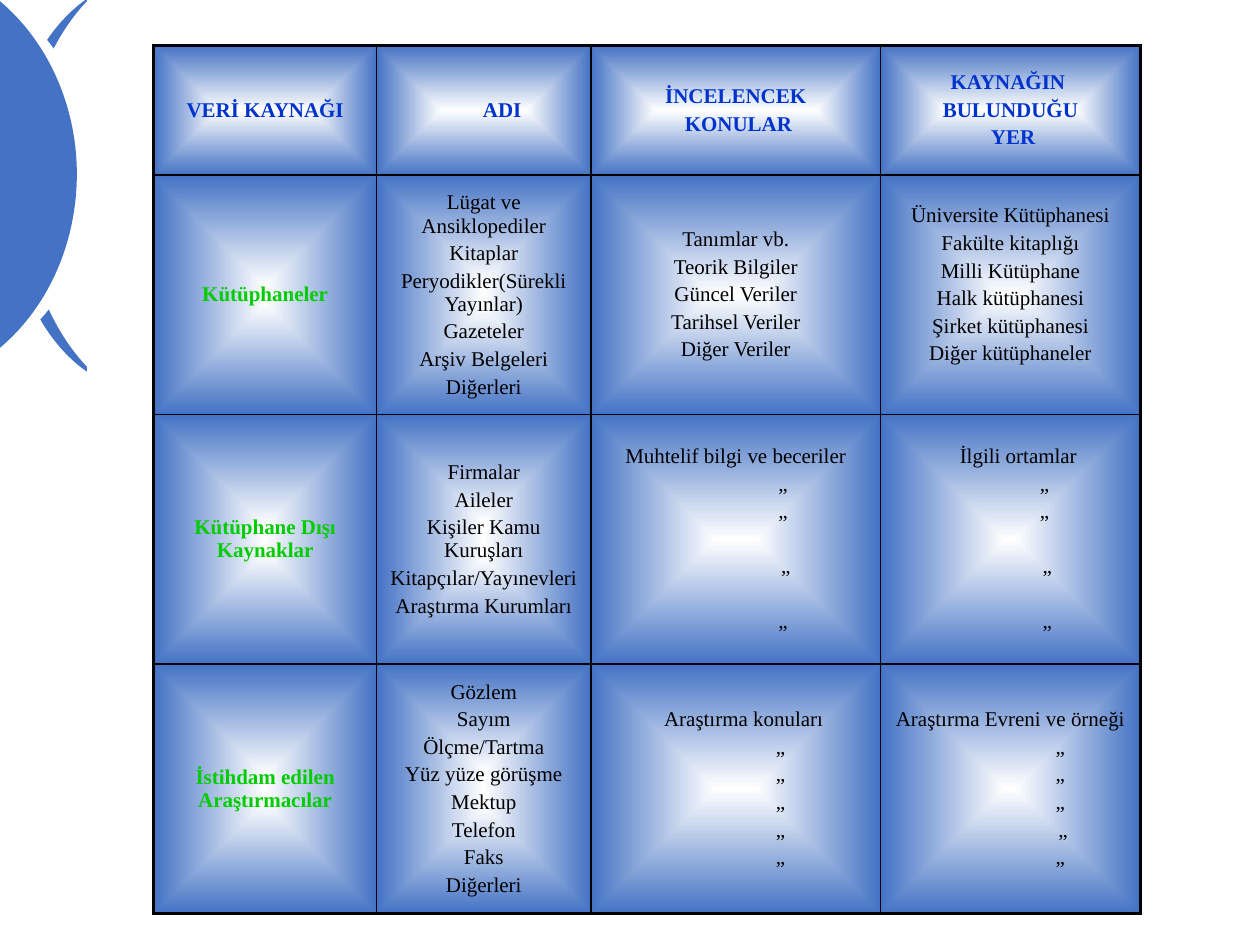
from lxml import etree
from pptx import Presentation
from pptx.dml.color import RGBColor
from pptx.enum import text
from pptx.oxml import ns
from pptx.util import Inches, Pt

FONT, SIZE = "Times New Roman", 12
BLUE, WHITE, BLACK = "4472C4", "FFFFFF", "000000"
HEAD, LABEL = "0033CC", "00CC00"
SPACE_PT, BEFORE_PT, SKIP_PT = 3, 2.4, 15.7
THIN, THICK = 1, 2.25

ARCS = [
    (BLUE, (0.05, -0.17, 2.23, 3.27), 180,
     [(0.69, 2.95), (0.3, 2.68), (0.05, 2.1), (0.05, 1.47),
      (0.05, 0.83), (0.3, 0.26), (0.69, -0.01)]),
    (WHITE, (0.18, -0.33, 2.51, 3.59), 180,
     [(0.7, 2.92), (0.37, 2.58), (0.18, 2.04), (0.18, 1.46),
      (0.18, 0.88), (0.37, 0.34), (0.7, 0)]),
    (WHITE, (-1.82, -0.15, 2.56, 3.09), 0,
     [(0, 0), (0.45, 0.25), (0.74, 0.8), (0.74, 1.39),
      (0.74, 1.99), (0.45, 2.54), (0, 2.79)]),
    (BLUE, (-2.28, -0.31, 2.88, 3.39), 0,
     [(0, 0.01), (0.38, 0.33), (0.61, 0.84), (0.61, 1.38),
      (0.61, 1.93), (0.38, 2.44), (0, 2.76)]),
]

LEFT, TOP = 1.22, 0.36
COLS = [1.77, 1.7, 2.3, 2.06]
ROWS = [1.03, 1.9, 1.98, 1.98]
BOTTOM_MARGINS = {(1, 3): 0.21}


def dittos(*indents, skips=()):
    return [("„", n, i in skips) for i, n in enumerate(indents)]


CELLS = [
    [["VERİ KAYNAĞI"], [("ADI", 7, False)],
     ["İNCELENCEK", ("KONULAR", 1, False)],
     ["KAYNAĞIN ", "BULUNDUĞU", ("YER", 1, False)]],
    [["Kütüphaneler"],
     ["Lügat ve Ansiklopediler", "Kitaplar", "Peryodikler(Sürekli Yayınlar)",
      "Gazeteler", "Arşiv Belgeleri", "Diğerleri"],
     ["Tanımlar vb.", "Teorik Bilgiler", "Güncel Veriler",
      "Tarihsel Veriler", "Diğer Veriler"],
     ["Üniversite Kütüphanesi", "Fakülte kitaplığı", "Milli Kütüphane",
      "Halk kütüphanesi", "Şirket kütüphanesi", "Diğer kütüphaneler"]],
    [["Kütüphane Dışı Kaynaklar"],
     ["Firmalar", "Aileler", "Kişiler Kamu Kuruşları",
      "Kitapçılar/Yayınevleri", "Araştırma Kurumları"],
     ["Muhtelif bilgi ve beceriler"] + dittos(18, 18, 19, 18, skips=(2, 3)),
     [("İlgili ortamlar", 3, False)] + dittos(13, 13, 14, 14, skips=(2, 3))],
    [["İstihdam edilen Araştırmacılar"],
     ["Gözlem", "Sayım", "Ölçme/Tartma", "Yüz yüze görüşme", "Mektup",
      "Telefon", "Faks", "Diğerleri"],
     [("Araştırma konuları", 3, False)] + dittos(17, 17, 17, 17, 17),
     ["Araştırma Evreni ve örneği"] + dittos(19, 19, 19, 20, 19)],
]


def rgb(value):
    return RGBColor.from_string(value)


def child(parent, tag, **attrs):
    return etree.SubElement(parent, ns.qn("a:" + tag), {k: str(v) for k, v in attrs.items()})


def add_arc(s, color, box, turn, points):
    left, top, width, height = box
    local = [(x - left, y - top) for x, y in points]
    if turn:
        local = [(width - x, height - y) for x, y in local]
    pts = [(Inches(x), Inches(y)) for x, y in local]
    builder = s.shapes.build_freeform(*pts[0])
    builder.add_line_segments(pts[3::3], close=True)
    sp = builder.convert_to_shape()
    sp.left, sp.top, sp.width, sp.height = map(Inches, box)
    sp.rotation = turn
    outline = sp._element.find(".//" + ns.qn("a:path"))
    outline.set("w", str(Inches(width)))
    outline.set("h", str(Inches(height)))
    for step in list(outline):
        outline.remove(step)
    for tag, group in (("moveTo", pts[:1]), ("cubicBezTo", pts[1:4]), ("cubicBezTo", pts[4:])):
        step = child(outline, tag)
        for x, y in group:
            child(step, "pt", x=int(x), y=int(y))
    child(outline, "close")
    sp.shadow.inherit = False
    sp.fill.solid()
    sp.fill.fore_color.rgb = rgb(color)
    sp.line.fill.background()


def style_cell(cell, widths):
    tc_pr = cell._tc.get_or_add_tcPr()
    for side, width in widths.items():
        line = child(tc_pr, "ln" + side, w=int(Pt(width)))
        child(child(line, "solidFill"), "srgbClr", val=BLACK)
    grad = child(tc_pr, "gradFill", rotWithShape=1)
    stops = child(grad, "gsLst")
    for pos, color in ((0, WHITE), (100000, BLUE)):
        child(child(stops, "gs", pos=pos), "srgbClr", val=color)
    child(child(grad, "path", path="shape"), "fillToRect", l=50000, t=50000, r=50000, b=50000)


def write_cell(cell, items, color, bold):
    cell.vertical_anchor = text.MSO_ANCHOR.MIDDLE
    tf = cell.text_frame
    for i, item in enumerate(items):
        words, indent, skip = (item, 0, False) if isinstance(item, str) else item
        p = tf.paragraphs[0] if i == 0 else tf.add_paragraph()
        p.alignment = text.PP_ALIGN.CENTER
        p.space_before = Pt(BEFORE_PT + SKIP_PT * skip)
        if indent:
            p._p.get_or_add_pPr().set("marL", str(int(Pt(indent * SPACE_PT))))
        r = p.add_run()
        r.text = words
        r.font.name, r.font.size, r.font.bold = FONT, Pt(SIZE), bold
        r.font.color.rgb = rgb(color)


def add_grid(s):
    frame = s.shapes.add_table(len(ROWS), len(COLS), Inches(LEFT), Inches(TOP),
                               Inches(sum(COLS)), Inches(sum(ROWS)))
    table = frame.table
    table.first_row = table.horz_banding = False
    for column, width in zip(table.columns, COLS):
        column.width = Inches(width)
    for row, height in zip(table.rows, ROWS):
        row.height = Inches(height)
    last_row, last_col = len(ROWS) - 1, len(COLS) - 1
    for i, row in enumerate(CELLS):
        for j, items in enumerate(row):
            cell = table.cell(i, j)
            color = HEAD if i == 0 else LABEL if j == 0 else BLACK
            write_cell(cell, items, color, color != BLACK)
            cell.margin_bottom = Inches(BOTTOM_MARGINS.get((i, j), 0.05))
            outer = {"L": j == 0, "R": j == last_col, "T": i == 0, "B": i == last_row}
            style_cell(cell, {k: THICK if edge else THIN for k, edge in outer.items()})


def main():
    prs = Presentation()
    prs.slide_width, prs.slide_height = Inches(10), Inches(7.5)
    s = prs.slides.add_slide(prs.slide_layouts[6])
    for arc in ARCS:
        add_arc(s, *arc)
    add_grid(s)
    prs.save("out.pptx")


if __name__ == "__main__":
    main()
